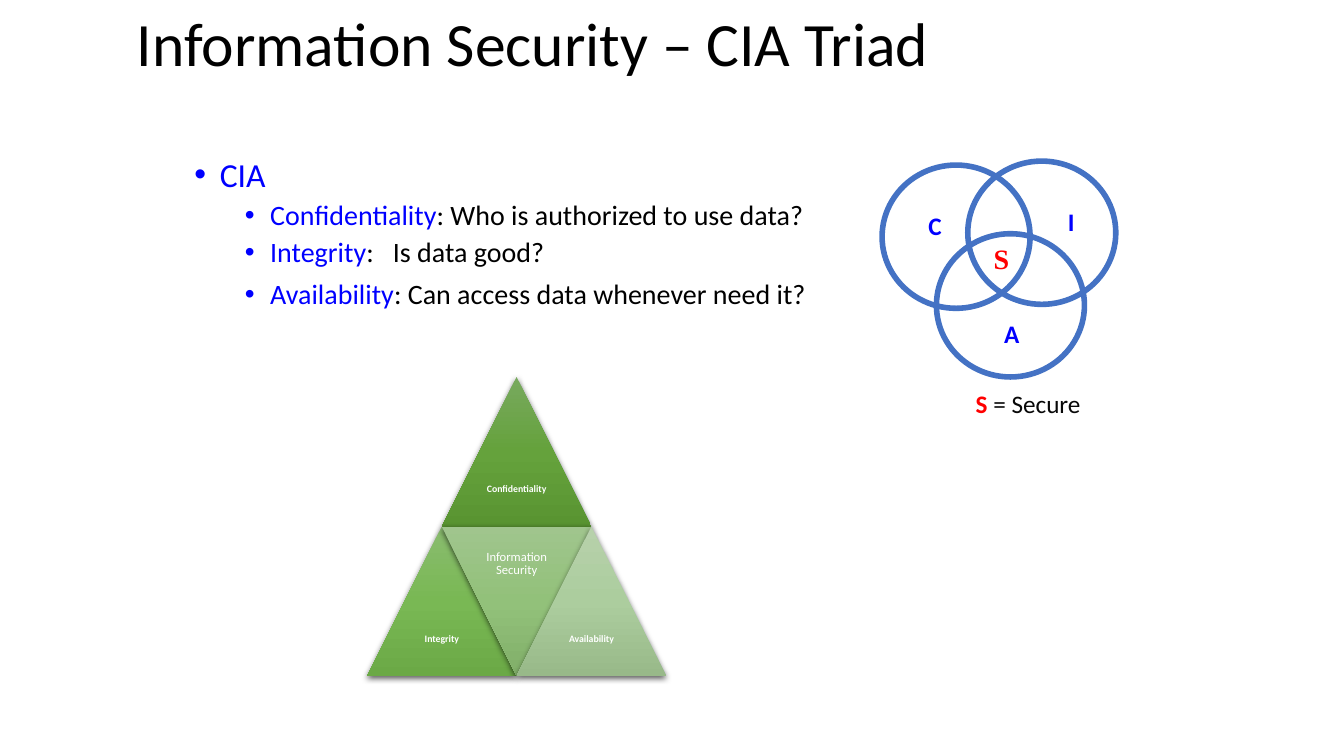
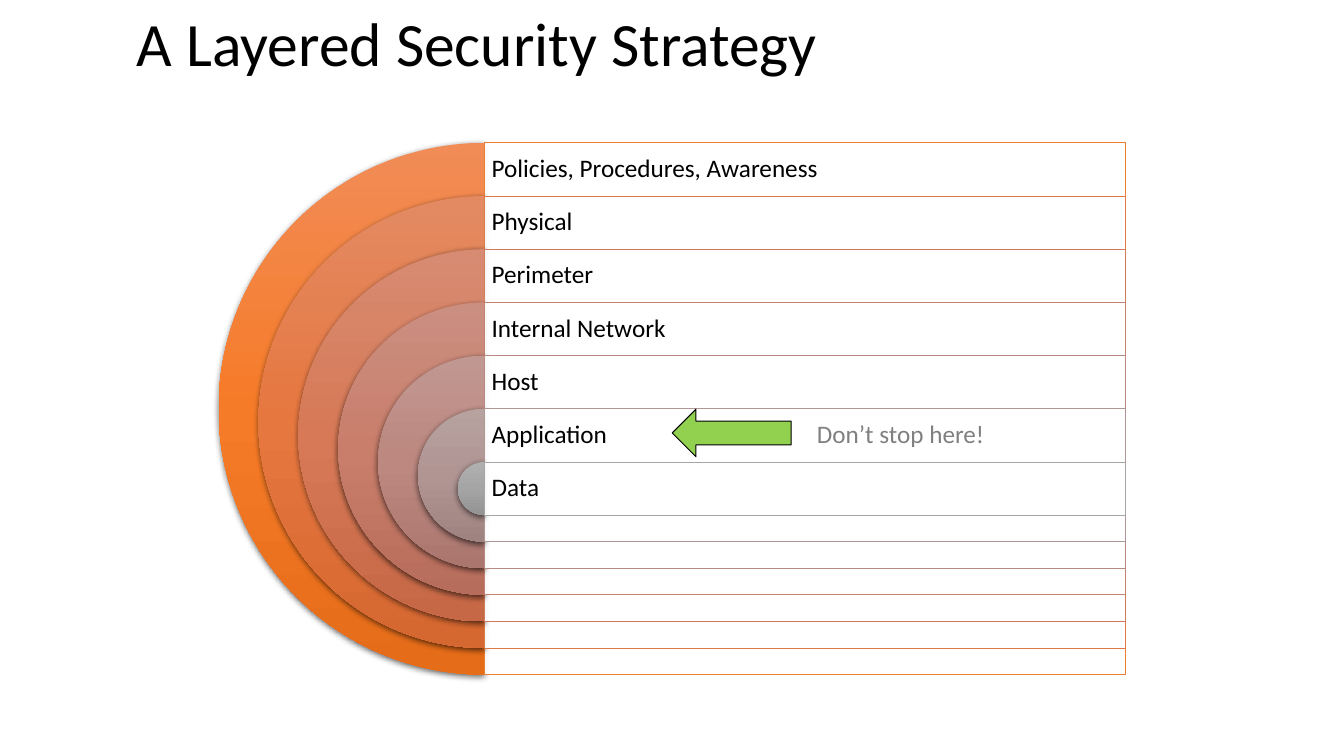
from pptx import Presentation
from pptx.dml.color import RGBColor
from pptx.enum.shapes import MSO_SHAPE
from pptx.enum.text import MSO_ANCHOR, PP_ALIGN
from pptx.oxml import parse_xml
from pptx.oxml.ns import qn
from pptx.util import Cm, Pt
from lxml.etree import SubElement

BLACK = RGBColor(0x00, 0x00, 0x00)
WHITE = RGBColor(0xFF, 0xFF, 0xFF)
INK = RGBColor(0x08, 0x08, 0x08)
GRAY = RGBColor(0x80, 0x80, 0x80)
BLUE = RGBColor(0x00, 0x00, 0xFF)
RED = RGBColor(0xFF, 0x00, 0x00)
RING = RGBColor(0x44, 0x72, 0xC4)
ARROW = RGBColor(0x92, 0xD0, 0x50)
FONT = "Calibri"
NS = 'xmlns:a="http://schemas.openxmlformats.org/drawingml/2006/main"'

TRIANGLES = [
    ("Confidentiality", 0.5, 0, False, ("78A95E", "65A23C", "599431")),
    ("Integrity", 0, 1, False, ("8ABC6F", "79B854", "6BA946")),
    ("Information Security", 0.5, 1, True, ("A0C58D", "92C17A", "81AF69")),
    ("Availability", 1, 1, False, ("B7D1AB", "ACCD9E", "98B989")),
]
LAYERS = [
    ("Policies, Procedures, Awareness", "ED7D31", ("F18C57", "F67B28", "E56C19")),
    ("Physical", "DE7A47", ("E38A63", "E6773F", "D56730")),
    ("Perimeter", "D17B5C", ("D78B72", "D77956", "C66846")),
    ("Internal Network", "C48170", ("CB8F81", "C97E6B", "B76D5B")),
    ("Host", "B98A82", ("C19791", "BC8880", "AA766E")),
    ("Application", "AE9694", ("B7A2A0", "B09593", "9E8381")),
    ("Data", "A5A5A5", ("AFAFAF", "A5A5A5", "939393")),
]


def add_shape(s, kind, x, y, w, h, fill=None, line=None, width=0.5):
    """Add a shadowless preset shape; lengths are in centimetres."""
    sp = s.shapes.add_shape(kind, Cm(x), Cm(y), Cm(w), Cm(h))
    sp.shadow.inherit = False
    if fill is None:
        sp.fill.background()
    else:
        sp.fill.solid()
        sp.fill.fore_color.rgb = fill
    if line is None:
        sp.line.fill.background()
    else:
        sp.line.color.rgb = line
        sp.line.width = Pt(width)
    return sp


def add_glossy(s, kind, x, y, size, colors):
    """Add a square shape with a vertical gradient and a soft shadow."""
    sp = add_shape(s, kind, x, y, size, size)
    props = sp._element.spPr
    stops = "".join(f'<a:gs pos="{i * 50000}"><a:srgbClr val="{c}"/></a:gs>'
                    for i, c in enumerate(colors))
    props.replace(props.find(qn("a:noFill")), parse_xml(
        f'<a:gradFill {NS} rotWithShape="0"><a:gsLst>{stops}</a:gsLst>'
        '<a:lin ang="5400000" scaled="0"/></a:gradFill>'))
    props.find(qn("a:effectLst")).append(parse_xml(
        f'<a:outerShdw {NS} blurRad="57150" dist="19050" dir="5400000" algn="ctr" '
        'rotWithShape="0"><a:srgbClr val="000000"><a:alpha val="63000"/>'
        '</a:srgbClr></a:outerShdw>'))
    return sp


def add_runs(p, runs, size, bold=False, font=FONT):
    """Fill a paragraph with (text, colour) runs in one type style."""
    p.font.size, p.font.bold, p.font.name = Pt(size), bold, font
    for text, color in runs:
        r = p.add_run()
        r.text = text
        r.font.color.rgb = color


def add_text(s, x, y, w, h, runs, size, bold=False, font=FONT, spacing=1.0,
             align=PP_ALIGN.LEFT, anchor=MSO_ANCHOR.TOP, inset=None):
    """Add a one-paragraph text box and return its paragraph."""
    tf = s.shapes.add_textbox(Cm(x), Cm(y), Cm(w), Cm(h)).text_frame
    tf.word_wrap, tf.vertical_anchor = True, anchor
    if inset is not None:
        tf.margin_left = tf.margin_right = tf.margin_top = tf.margin_bottom = Cm(inset)
    p = tf.paragraphs[0]
    p.alignment, p.line_spacing = align, spacing
    add_runs(p, runs, size, bold, font)
    return p


def add_titled_slide(prs, title):
    """Add a blank slide with the shared title style."""
    s = prs.slides.add_slide(prs.slide_layouts[6])
    add_text(s, 3.2, -0.13, 28.35, 2.62, [(title, BLACK)], 44,
             spacing=0.9, anchor=MSO_ANCHOR.MIDDLE)
    return s


def add_definitions(s, x, y, w, h):
    """Add the bulleted CIA definitions."""
    tf = s.shapes.add_textbox(Cm(x), Cm(y), Cm(w), Cm(h)).text_frame
    tf.word_wrap = True
    items = [
        (0.64, 24, 0, [("CIA", BLUE)]),
        (1.91, 20, 5, [("Confidentiality", BLUE), (": Who is authorized to use data?", BLACK)]),
        (1.91, 20, 5, [("Integrity", BLUE), (":\tIs data good?", BLACK)]),
        (1.91, 20, 8, [("Availability", BLUE), (": Can access data whenever need it?", BLACK)]),
    ]
    for i, (margin, size, before, runs) in enumerate(items):
        p = tf.add_paragraph() if i else tf.paragraphs[0]
        p.line_spacing, p.space_before = 0.9, Pt(before)
        props = p._p.get_or_add_pPr()
        props.set("marL", str(Cm(margin)))
        props.set("indent", str(-Cm(0.64)))
        SubElement(props, qn("a:buFont"), typeface="Arial")
        SubElement(props, qn("a:buChar"), char="•")
        if any("\t" in text for text, _ in runs):
            tabs = SubElement(props, qn("a:tabLst"))
            SubElement(tabs, qn("a:tab"), pos=str(Cm(5)), algn="l")
        add_runs(p, runs, size)


def add_venn(s, x, y):
    """Add three overlapping rings with their letters and a key."""
    for dx, dy in [(0, 0.1), (2.16, 0), (1.37, 1.83)]:
        add_shape(s, MSO_SHAPE.OVAL, x + dx, y + dy, 3.73, 3.61, line=RING, width=4)
    for letter, dx, dy in [("C", 0.89, 1.24), ("I", 4.32, 1.14), ("A", 2.82, 3.96)]:
        add_text(s, x + dx, y + dy, 0.89, 0.91, [(letter, BLUE)], 18, bold=True,
                 spacing=0.85, align=PP_ALIGN.CENTER)
    add_text(s, x + 2.54, y + 1.9, 0.94, 1.09, [("S", RED)], 20, bold=True,
             font="Times New Roman", align=PP_ALIGN.CENTER)
    key = add_text(s, x + 2.11, y + 5.61, 5.28, 1.02,
                   [("S", RED), (" = Secure", INK)], 18)
    key.runs[0].font.bold = True


def add_triad(s, x, y, side):
    """Add the large triangle made of four labelled triangles."""
    half = side / 2
    for label, column, row, inverted, colors in TRIANGLES:
        left, top = x + column * side, y + row * side
        sp = add_glossy(s, MSO_SHAPE.ISOSCELES_TRIANGLE, left, top, side, colors)
        sp.rotation = 180 if inverted else 0
        add_text(s, left + half / 2, top + (0 if inverted else half), half, half,
                 [(label, WHITE)], 9 if inverted else 7, bold=not inverted,
                 spacing=0.9, align=PP_ALIGN.CENTER, anchor=MSO_ANCHOR.MIDDLE,
                 inset=0.09 if inverted else 0.07)


def add_layers(s, x, y, w, size):
    """Add nested half discs, each with a labelled panel on its right."""
    row = size / 10
    middle = x + size / 2
    for i, (label, line, colors) in enumerate(LAYERS):
        d = row * (10 - 1.5 * i)
        top = y + i * row
        pie = add_glossy(s, MSO_SHAPE.PIE, middle - d / 2, top, d, colors)
        pie.adjustments[0], pie.adjustments[1] = 54, 162
        panel = add_shape(s, MSO_SHAPE.RECTANGLE, middle, top, w, d, WHITE,
                          RGBColor.from_string(line))
        color = panel._element.spPr.find(qn("a:solidFill"))[0]
        SubElement(color, qn("a:alpha"), val="90000")
        add_text(s, middle, top, w, row, [(label, BLACK)], 18, spacing=0.9,
                 anchor=MSO_ANCHOR.MIDDLE, inset=0.18)


def add_callout(s, x, y):
    """Add the arrow and its remark."""
    add_shape(s, MSO_SHAPE.LEFT_ARROW, x, y, 3, 1.2, ARROW, BLACK, 0.75)
    add_text(s, x + 3.4, y + 0.1, 7.29, 1.02, [("Don’t stop here!", GRAY)], 18)


def main():
    """Build and save the two slides."""
    prs = Presentation()
    prs.slide_width, prs.slide_height = Cm(33.87), Cm(19.05)
    s = add_titled_slide(prs, "Information Security – CIA Triad")
    add_definitions(s, 4.65, 3.86, 17.42, 5.87)
    add_venn(s, 22.23, 4.06)
    add_triad(s, 9.25, 9.5, 3.77)
    s = add_titled_slide(prs, "A Layered Security Strategy")
    add_layers(s, 5.51, 3.6, 16.15, 13.4)
    add_callout(s, 16.94, 10.31)
    prs.save("out.pptx")


if __name__ == "__main__":
    main()
